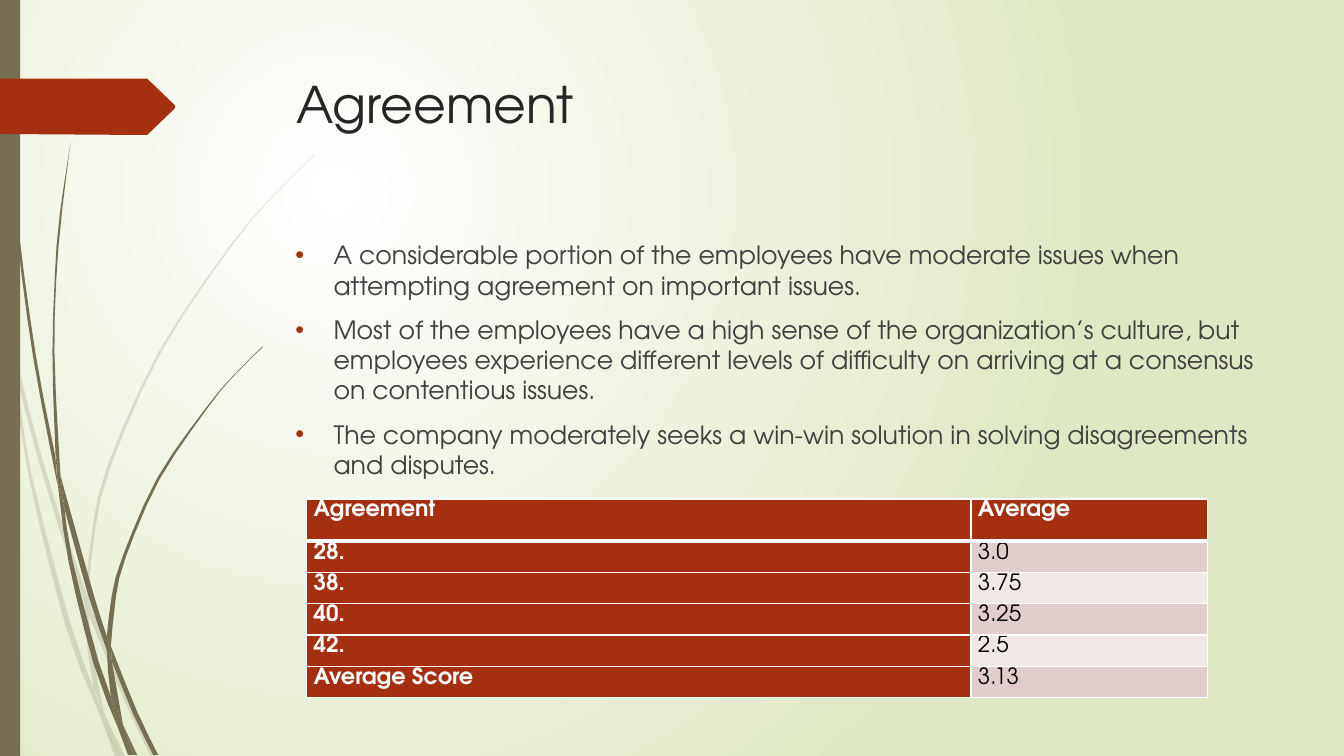
from dataclasses import dataclass
from math import dist

from lxml import etree
from pptx import Presentation
from pptx.dml.color import RGBColor
from pptx.enum.shapes import MSO_SHAPE
from pptx.oxml.ns import qn
from pptx.util import Inches, Pt

RECTANGLE = MSO_SHAPE.RECTANGLE

# Content
TITLE = "Agreement"
BULLETS = [
    "A considerable portion of the employees have moderate issues when "
    "attempting agreement on important issues.",
    "Most of the employees have a high sense of the organization’s culture, but "
    "employees experience different levels of difficulty on arriving at a "
    "consensus on contentious issues.",
    "The company moderately seeks a win-win solution in solving disagreements "
    "and disputes.",
]
SCORES = [
    ("Agreement", "Average"),
    ("28.", "3.0"),
    ("38.", "3.75"),
    ("40.", "3.25"),
    ("42.", "2.5"),
    ("Average Score", "3.13"),
]

# Grass blades: the two smooth edges of each piece, in inches
PALE_BLADES = [
    ([(0, 2.82), (.09, 3.22), (.11, 3.5)], [(.1, 3.44), (0, 2.99)]),
    ([(.14, 3.45), (.36, 4.34), (.62, 5.2), (.85, 5.86)],
     [(.84, 5.99), (.58, 5.22), (.36, 4.49), (.17, 3.76)]),
    ([(.88, 5.96), (.92, 6.07), (1.27, 6.92), (1.55, 7.51)],
     [(1.5, 7.51), (1.23, 6.94), (.88, 6.1)]),
    ([(1.05, 7.11), (1.24, 7.51)], [(1.19, 7.51)]),
    ([(.11, 3.5), (.28, 4.7), (.65, 6.21), (.92, 6.93), (1.01, 7.14)],
     [(.99, 7.07), (.93, 6.83), (.7, 6.19), (.31, 4.69), (.17, 3.76)]),
    ([(.84, 5.99), (.87, 6.46), (.93, 6.83), (1.05, 7.11)],
     [(1.03, 7.06), (.91, 6.46), (.88, 6.1)]),
    ([(.88, 5.96), (.88, 5.84), (.95, 5.22), (1.1, 4.62), (1.6, 3.49),
      (2.29, 2.45), (2.68, 1.98), (3.12, 1.54)],
     [(3.12, 1.53), (2.68, 1.97), (2.28, 2.44), (1.58, 3.48),
      (1.07, 4.61), (.92, 5.22), (.85, 5.84)]),
    ([(1.01, 7.14), (1.14, 7.51)], [(1.19, 7.51)]),
    ([(.88, 6.1), (.88, 5.96)], [(.85, 5.86), (.84, 5.99)]),
    ([(.93, 6.83), (1.01, 7.14), (1.19, 7.51)], [(1.05, 7.11), (.96, 6.92)]),
]
DARK_BLADES = [
    ([(.03, 0), (.07, 1.1), (.17, 2.33), (.33, 3.55), (.57, 4.81)],
     [(.55, 4.53), (.36, 3.55), (.19, 2.32), (.08, 1.09), (.04, 0)]),
    ([(.6, 4.72), (.93, 5.9), (1.06, 6.31)],
     [(1.06, 6.45), (.88, 5.92), (.64, 5.05)]),
    ([(1.1, 6.41), (1.36, 7.06), (1.57, 7.49)],
     [(1.52, 7.49), (1.32, 7.08), (1.11, 6.56)]),
    ([(.57, 4.77), (.68, 5.57), (.93, 6.59), (1.17, 7.22)],
     [(1.1, 6.91), (.98, 6.57), (.72, 5.56), (.64, 5.05)]),
    ([(.6, 4.72), (.54, 3.49), (.58, 2.45), (.7, 1.41)],
     [(.62, 1.93), (.56, 2.45), (.52, 3.49), (.55, 4.49)]),
    ([(1.22, 7.19), (1.36, 7.49)], [(1.33, 7.49)]),
    ([(.57, 4.77), (.64, 5.05)], [(.6, 4.72), (.55, 4.49)]),
    ([(1.1, 6.41), (1.15, 5.92), (1.25, 5.52), (1.58, 4.76),
      (2.05, 4.06), (2.31, 3.74), (2.61, 3.44)],
     [(2.6, 3.44), (2.31, 3.73), (2.04, 4.05), (1.56, 4.74),
      (1.22, 5.51), (1.11, 5.9), (1.06, 6.31)]),
    ([(1.17, 7.22), (1.31, 7.49)], [(1.27, 7.49)]),
    ([(1.06, 6.45), (1.1, 6.91), (1.22, 7.19)], [(1.11, 6.56)]),
    ([(1.06, 6.45), (1.11, 6.56)], [(1.1, 6.41), (1.06, 6.31)]),
    ([(1.1, 6.91), (1.17, 7.22), (1.3, 7.49)], [(1.33, 7.49), (1.22, 7.19)]),
]
ARROW = [(0, .78), (1.46, .78), (1.73, 1.04), (1.74, 1.06), (1.73, 1.08),
         (1.46, 1.34), (0, 1.33)]


@dataclass(frozen=True)
class Theme:
    font: str = "TeX Gyre Adventor"
    title_size: int = 36
    body_size: int = 18
    table_size: int = 16
    title: str = "262626"
    body: str = "404040"
    accent: str = "A53010"
    grass: str = "766F54"
    white: str = "FFFFFF"
    black: str = "000000"
    glow: str = "DFE8C4"
    bands: tuple = ("E1CDCC", "F0E8E7")


THEME = Theme()
WIDTH, HEIGHT = 13.33, 7.5
TITLE_BOX = (2.84, .68, 9.75, 1.4)
BODY_BOX = (2.83, 2.33, 9.75, 4.13)
TABLE_LEFT, TABLE_TOP = 3.04, 4.95
COLUMNS = (6.59, 2.35)
HEADER_ROW, SCORE_ROW = .42, .31


def rgb(color):
    return RGBColor.from_string(color)


def add_xml(parent, tag, **attributes):
    return etree.SubElement(parent, qn(tag), attributes)


def write(para, text, size, color, bold=False):
    span = para.add_run()
    span.text = text
    span.font.name, span.font.size, span.font.bold = THEME.font, Pt(size), bold
    span.font.color.rgb = rgb(color)


def add_text_frame(page, box):
    frame = page.shapes.add_textbox(*map(Inches, box)).text_frame
    frame.word_wrap = True
    return frame


def add_bullet(para):
    para.space_before = Pt(10)
    props = para._p.get_or_add_pPr()
    props.set("marL", str(Inches(.38)))
    props.set("indent", str(Inches(-.38)))
    add_xml(add_xml(props, "a:buClr"), "a:srgbClr", val=THEME.accent)
    add_xml(props, "a:buFont", typeface="Arial")
    add_xml(props, "a:buChar", char="•")


def paint(shape, color, alpha=None):
    shape.shadow.inherit = False
    shape.fill.solid()
    shape.fill.fore_color.rgb = rgb(color)
    shape.line.fill.background()
    if alpha:
        tint = shape._element.spPr.find(qn("a:solidFill"))[0]
        add_xml(tint, "a:alpha", val=str(alpha * 1000))


def smooth(edge):
    """Catmull-Rom curve through one edge, with more steps on longer spans."""
    padded = [edge[0], *edge, edge[-1]]
    curve = [edge[0]]
    for a, b, c, d in zip(padded, padded[1:], padded[2:], padded[3:]):
        steps = min(3, 1 + int(dist(b, c) / .4))
        for t in (step / steps for step in range(1, steps + 1)):
            curve.append(tuple(
                q + t / 2 * (r - p + t * (2 * p - 5 * q + 4 * r - s
                                          + t * (3 * q - p - 3 * r + s)))
                for p, q, r, s in zip(a, b, c, d)))
    return curve


def add_outline(page, points, color, alpha=None):
    first, *rest = [(Inches(x), Inches(y)) for x, y in points]
    builder = page.shapes.build_freeform(*first)
    builder.add_line_segments(rest)
    paint(builder.convert_to_shape(), color, alpha)


def add_borders(cell, bottom):
    props = cell._tc.get_or_add_tcPr()
    for side, points in (("L", 1), ("R", 1), ("T", 1), ("B", bottom)):
        line = add_xml(props, f"a:ln{side}", w=str(Pt(points)))
        add_xml(add_xml(line, "a:solidFill"), "a:srgbClr", val=THEME.white)


def add_scores(page):
    heights = [HEADER_ROW] + [SCORE_ROW] * (len(SCORES) - 1)
    table = page.shapes.add_table(
        len(SCORES), len(COLUMNS), Inches(TABLE_LEFT), Inches(TABLE_TOP),
        Inches(sum(COLUMNS)), Inches(sum(heights))).table
    for column, width in zip(table.columns, COLUMNS):
        column.width = Inches(width)
    for r, (texts, height) in enumerate(zip(SCORES, heights)):
        table.rows[r].height = Inches(height)
        for c, text in enumerate(texts):
            cell = table.cell(r, c)
            strong = r == 0 or c == 0
            cell.margin_left = cell.margin_right = Inches(.07)
            cell.margin_top = cell.margin_bottom = 0
            add_borders(cell, bottom=3 if r == 0 else 1)
            cell.fill.solid()
            cell.fill.fore_color.rgb = rgb(
                THEME.accent if strong else THEME.bands[(r - 1) % 2])
            para = cell.text_frame.paragraphs[0]
            para.line_spacing = 1.07
            write(para, text, THEME.table_size,
                  THEME.white if strong else THEME.black, bold=strong)


def add_background(page):
    fill = page.background.fill
    fill.gradient()
    for stop, color, place in zip(fill.gradient_stops, (THEME.white, THEME.glow), (0, 1)):
        stop.color.rgb = rgb(color)
        stop.position = place
    gradient = page.background._cSld.find(".//" + qn("a:gradFill"))
    gradient.remove(gradient.find(qn("a:lin")))
    circle = add_xml(gradient, "a:path", path="circle")
    add_xml(circle, "a:fillToRect", l="50000", t="50000", r="100000", b="100000")


def main():
    deck = Presentation()
    deck.slide_width, deck.slide_height = Inches(WIDTH), Inches(HEIGHT)
    page = deck.slides.add_slide(deck.slide_layouts[6])

    # Backdrop
    add_background(page)
    for blades, alpha in ((PALE_BLADES, 20), (DARK_BLADES, None)):
        for there, back in blades:
            add_outline(page, smooth(there) + smooth(back), THEME.grass, alpha)
    bar = page.shapes.add_shape(RECTANGLE, 0, 0, Inches(.2), Inches(HEIGHT))
    paint(bar, THEME.grass)
    add_outline(page, ARROW, THEME.accent)

    # Title and bullets
    title = add_text_frame(page, TITLE_BOX)
    write(title.paragraphs[0], TITLE, THEME.title_size, THEME.title)
    body = add_text_frame(page, BODY_BOX)
    for index, text in enumerate(BULLETS):
        para = body.add_paragraph() if index else body.paragraphs[0]
        add_bullet(para)
        write(para, text, THEME.body_size, THEME.body)

    # Score table
    add_scores(page)
    deck.save("out.pptx")


if __name__ == "__main__":
    main()
